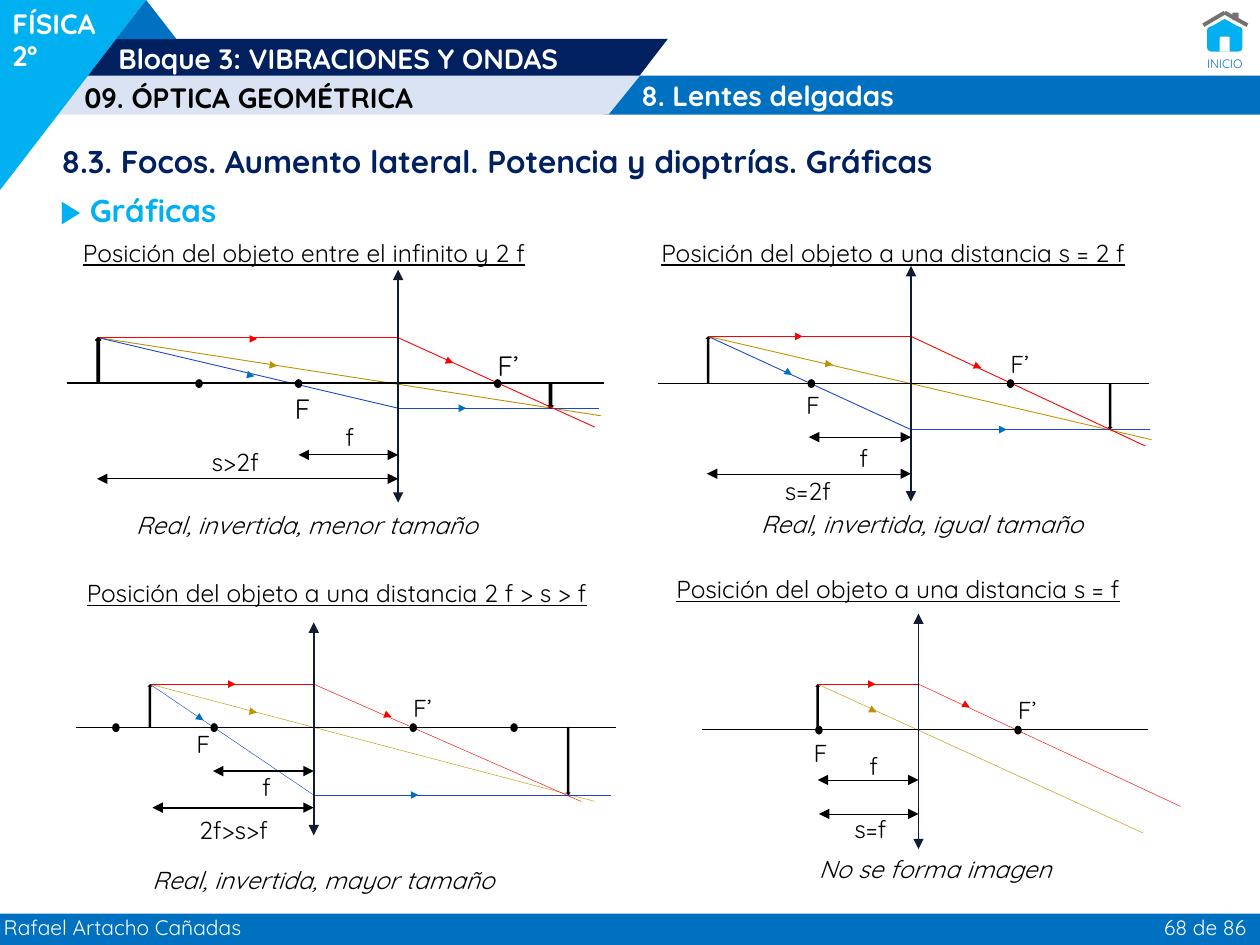
from dataclasses import dataclass

from lxml.etree import SubElement
from pptx import Presentation
from pptx.dml.color import RGBColor
from pptx.enum.shapes import MSO_CONNECTOR, MSO_SHAPE
from pptx.enum.text import PP_ALIGN
from pptx.oxml.ns import qn
from pptx.util import Emu, Pt

EMU_PER_PX = 9144  # 100 px to the inch
FOCAL = 79

WHITE, BLACK, NAVY, SKY, BLUE = "FFFFFF", "000000", "002060", "00B0F0", "0070C0"
PALE, GREY, LENS = "DAE3F3", "767171", "101C32"
RED, RAY_BLUE, GOLD, MARK_GOLD = "FF0000", "1C47D2", "C49500", "BF9000"


def px(n):
    return Emu(n * EMU_PER_PX)


def rgb(value):
    return RGBColor.from_string(value)


@dataclass
class SlideBuilder:
    s: object
    font: str = "Quicksand"

    def shape(self, kind, x, y, w, h, fill, rot=0, adj=None, flip=False, outline=0):
        sp = self.s.shapes.add_shape(kind, px(x), px(y), px(w), px(h))
        sp.shadow.inherit = False
        sp.fill.solid()
        sp.fill.fore_color.rgb = rgb(fill)
        if outline:
            sp.line.color.rgb = rgb(fill)
            sp.line.width = Pt(outline)
        else:
            sp.line.fill.background()
        sp.rotation = rot
        if adj is not None:
            sp.adjustments[0] = adj
        if flip:
            sp._element.spPr.find(qn("a:xfrm")).set("flipV", "1")

    def text(self, text, x, y, w, h, size=14, color=BLACK, bold=False, italic=False,
             underline=False, align=PP_ALIGN.LEFT, inset=True, wrap=True):
        tf = self.s.shapes.add_textbox(px(x), px(y), px(w), px(h)).text_frame
        tf.word_wrap = wrap
        if not inset:
            tf.margin_left = tf.margin_right = tf.margin_top = tf.margin_bottom = 0
        p = tf.paragraphs[0]
        p.text = text
        p.alignment = align
        f = p.font
        f.name, f.size, f.color.rgb = self.font, Pt(size), rgb(color)
        f.bold, f.italic, f.underline = bold, italic, underline

    def line(self, x1, y1, x2, y2, color, width, arrows=False):
        c = self.s.shapes.add_connector(MSO_CONNECTOR.STRAIGHT, px(x1), px(y1), px(x2), px(y2))
        c.line.color.rgb = rgb(color)
        c.line.width = Pt(width)
        if arrows:
            ln = c.line._get_or_add_ln()
            for end in ("a:headEnd", "a:tailEnd"):
                SubElement(ln, qn(end)).set("type", "triangle")
        SubElement(c._element.spPr, qn("a:effectLst"))

    def lens_graph(self, title, caption, lens, axis, tip, red_end, gold_end, dots, f_label,
                   dims, marks, image=None, blue_end=None, ray_width=0.25, axis_width=0.5,
                   dim_width=0.25, label_size=14, gold=GOLD, outline=0):
        lens_x, lens_top, lens_bottom = lens
        axis_x1, axis_x2, axis_y = axis
        tip_x, tip_y = tip

        self.text(*title, 451, 34, underline=True)
        self.text(*caption, 353, 34, italic=True)

        # Rays through the centre and the two foci
        self.line(tip_x, tip_y, *gold_end, gold, ray_width)
        if image:
            image_x, image_y = image
            self.line(tip_x, tip_y, lens_x, image_y, RAY_BLUE, ray_width)
            self.line(lens_x, image_y, blue_end, image_y, RAY_BLUE, ray_width)
            self.shape(MSO_SHAPE.DOWN_ARROW, image_x - 2, axis_y, 4, image_y - axis_y,
                       BLACK, outline=outline)
        self.line(tip_x, tip_y, lens_x, tip_y, RED, ray_width)
        self.line(lens_x, tip_y, *red_end, RED, ray_width)
        self.shape(MSO_SHAPE.UP_ARROW, tip_x - 2, tip_y, 4, axis_y - tip_y, BLACK,
                   outline=outline)

        # Axis, lens and foci
        self.line(axis_x1, axis_y, axis_x2, axis_y, BLACK, axis_width)
        self.line(lens_x, lens_top, lens_x, lens_bottom, LENS, 1, arrows=True)
        for x in (lens_x - FOCAL, lens_x + FOCAL, *dots):
            self.shape(MSO_SHAPE.OVAL, x - 3, axis_y - 3, 6, 7, BLACK)
        self.text("F", *f_label, 38, 34, label_size)
        self.text("F’", lens_x + FOCAL - 10, axis_y - 32, 53, 34, label_size)

        # Distances to the lens
        for x, y, label, label_x, label_y in dims:
            self.line(x, y, lens_x, y, BLACK, dim_width, arrows=True)
            self.text(label, label_x, label_y, 65, 24, inset=False)

        # Direction marks on the rays
        for x, y, rot, color in marks:
            self.shape(MSO_SHAPE.ISOSCELES_TRIANGLE, x, y, 6, 6, color, rot=rot)


def main():
    prs = Presentation()
    prs.slide_width, prs.slide_height = px(1000), px(750)
    b = SlideBuilder(prs.slides.add_slide(prs.slide_layouts[6]))

    # Header bands and footer
    b.shape(MSO_SHAPE.RECTANGLE, 479, 60, 521, 31, BLUE)
    b.shape(MSO_SHAPE.PARALLELOGRAM, 60, 31, 470, 30, NAVY, adj=0.77)
    b.shape(MSO_SHAPE.PARALLELOGRAM, 36, 60, 472, 31, PALE, adj=0.81)
    b.shape(MSO_SHAPE.RIGHT_TRIANGLE, 0, 0, 116, 151, SKY, flip=True)
    b.shape(MSO_SHAPE.ISOSCELES_TRIANGLE, 92, 0, 48, 31, BLUE)
    b.shape(MSO_SHAPE.RECTANGLE, 0, 725, 1000, 25, BLUE)
    b.text("FÍSICA", 0, 0, 95, 37, 16, WHITE, bold=True)
    b.text("2º", 0, 26, 43, 37, 16, WHITE, bold=True)
    b.text("Bloque 3: VIBRACIONES Y ONDAS", 94, 33, 464, 27, 16, WHITE, bold=True, inset=False)
    b.text("09. ÓPTICA GEOMÉTRICA", 67, 64, 276, 27, 16, bold=True, inset=False, wrap=False)
    b.text("8. Lentes delgadas", 509, 62, 482, 27, 16, WHITE, bold=True, inset=False)
    b.text("Rafael Artacho Cañadas", 3, 726, 254, 20, 12, WHITE, inset=False)
    b.text("68 de 86", 888, 726, 101, 20, 12, WHITE, align=PP_ALIGN.RIGHT, inset=False)

    # Home button
    b.shape(MSO_SHAPE.ROUNDED_RECTANGLE, 958, 21, 28, 20, SKY)
    b.shape(MSO_SHAPE.ISOSCELES_TRIANGLE, 958, 15, 28, 8, SKY)
    b.shape(MSO_SHAPE.ROUND_2_SAME_RECTANGLE, 968, 29, 8, 12, WHITE)
    for eave_x in (955, 990):
        b.line(eave_x, 20, 972, 10, GREY, 2.25)
    b.shape(MSO_SHAPE.ROUNDED_RECTANGLE, 978, 10, 5, 6, GREY)
    b.text("INICIO", 958, 45, 29, 12, 7, BLUE, inset=False, wrap=False)

    # Headings
    b.text("8.3. Focos. Aumento lateral. Potencia y dioptrías. Gráficas",
           39, 108, 918, 40, 18, NAVY, bold=True)
    b.text("▶ Gráficas", 38, 147, 920, 40, 18, SKY, bold=True)

    # Object beyond 2f
    b.lens_graph(
        ("Posición del objeto entre el infinito y 2 f", 56, 184),
        ("Real, invertida, menor tamaño", 98, 400),
        lens=(316, 214, 399), axis=(53, 479, 304), tip=(78, 268), image=(437, 324),
        red_end=(472, 339), gold_end=(477, 330), blue_end=475,
        dots=[158], f_label=(224, 306),
        dims=[(77, 380, "s>2f", 168, 355), (237, 361, "f", 274, 335)],
        marks=[(198, 266, 90, RED), (354, 284, 112, RED), (214, 287, 98, MARK_GOLD),
               (196, 295, 103, BLUE), (364, 321, 90, BLUE)],
        ray_width=0.5, axis_width=0.75, dim_width=0.5, label_size=16, gold=MARK_GOLD,
        outline=0.75)

    # Object at 2f
    b.lens_graph(
        ("Posición del objeto a una distancia s = 2 f", 515, 184),
        ("Real, invertida, igual tamaño", 594, 399),
        lens=(723, 211, 398), axis=(522, 912, 304), tip=(562, 267), image=(881, 341),
        red_end=(909, 354), gold_end=(914, 349), blue_end=913,
        dots=[], f_label=(630, 305),
        dims=[(561, 376, "s=2f", 623, 378), (642, 347, "f", 682, 352)],
        marks=[(631, 264, 90, RED), (773, 288, 112, RED), (623, 293, 122, BLUE),
               (793, 338, 90, BLUE), (655, 286, 98, MARK_GOLD)],
        ray_width=0.5)

    # Object between 2f and f
    b.lens_graph(
        ("Posición del objeto a una distancia 2 f > s > f", 59, 454),
        ("Real, invertida, mayor tamaño", 111, 682),
        lens=(249, 494, 663), axis=(60, 489, 577), tip=(119, 543), image=(451, 631),
        red_end=(461, 636), gold_end=(472, 636), blue_end=485,
        dots=[92, 408], f_label=(146, 574),
        dims=[(121, 641, "2f>s>f", 158, 647), (169, 612, "f", 208, 613)],
        marks=[(181, 540, 90, RED), (198, 562, 100, MARK_GOLD), (156, 567, 123, BLUE),
               (305, 565, 112, RED), (326, 628, 90, BLUE)],
        axis_width=0.25, dim_width=1)

    # Object at the focus
    b.lens_graph(
        ("Posición del objeto a una distancia s = f", 527, 451),
        ("No se forma imagen", 640, 673),
        lens=(729, 487, 674), axis=(557, 911, 579), tip=(649, 543),
        red_end=(937, 640), gold_end=(907, 661),
        dots=[], f_label=(636, 581),
        dims=[(650, 646, "s=f", 678, 646), (649, 619, "f", 690, 596)],
        marks=[(689, 540, 90, RED), (690, 561, 117, MARK_GOLD), (764, 557, 119, RED)])

    prs.save("out.pptx")


if __name__ == "__main__":
    main()
